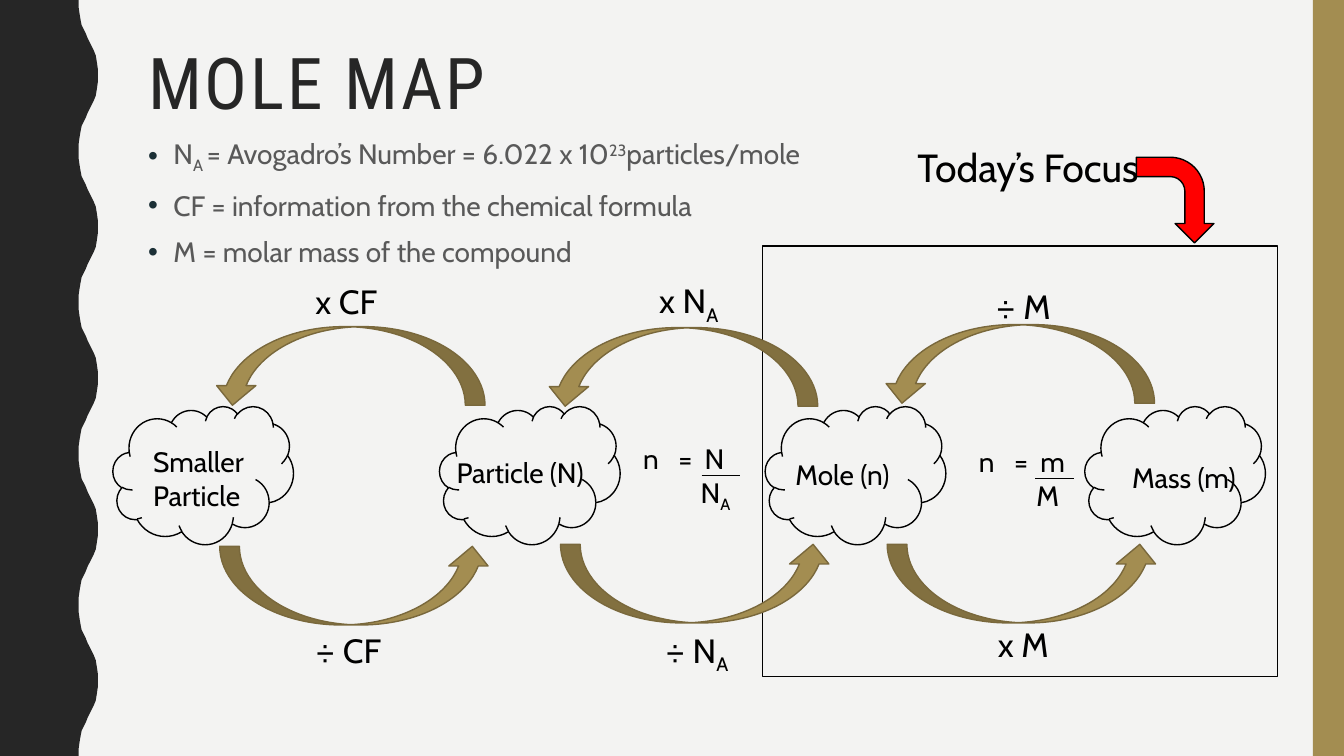
"""Build the Mole Map slide: conversions between particles, moles and mass."""
from lxml import etree
from pptx import Presentation
from pptx import util as u
from pptx.dml.color import RGBColor
from pptx.enum import shapes, text
from pptx.oxml import ns

PX = 9144
COLORS = {
    "paper": "F3F3F2", "wave": "262626", "gold": "A38D51", "gold_edge": "79683C",
    "body": "595959", "bullet": "1B2F36", "ink": "000000", "red": "FF0000",
}


def write(paragraph, pieces, size, color, font="Cabin"):
    for words, baseline in pieces:
        run = paragraph.add_run()
        run.text = words
        run.font.size = u.Pt(size)
        run.font.name = font
        run.font.color.rgb = RGBColor.from_string(COLORS[color])
        if baseline:
            run._r.get_or_add_rPr().set("baseline", str(baseline * 1000))


def paint(shape, fill, line):
    shape.shadow.inherit = False
    if fill:
        shape.fill.solid()
        shape.fill.fore_color.rgb = RGBColor.from_string(COLORS[fill])
    else:
        shape.fill.background()
    if line:
        shape.line.color.rgb = RGBColor.from_string(COLORS[line])
        shape.line.width = u.Pt(1)
    else:
        shape.line.fill.background()


deck = Presentation()
deck.slide_width, deck.slide_height = 1333 * PX, 750 * PX
slide = deck.slides.add_slide(deck.slide_layouts[1])
slide.background.fill.solid()
slide.background.fill.fore_color.rgb = RGBColor.from_string(COLORS["paper"])

rise = [(78, 0), (78, 7), (79, 14), (80, 20), (81, 25), (83, 29), (85, 33), (87, 38),
        (89, 42), (91, 46), (93, 50), (95, 55), (96, 61), (97, 68), (97, 75)]
period = rise + [(x, 150 - y) for x, y in reversed(rise[:-1])]
edge = [(x, y + 150 * turn) for turn in range(5) for x, y in period]
wave = slide.shapes.build_freeform(0, 0, scale=PX)
wave.add_line_segments(edge + [(0, 750)], close=True)
paint(wave.convert_to_shape(), "wave", None)

title, body = slide.shapes.title, slide.placeholders[1]
for holder, top, height in ((title, 42, 163), (body, 127, 592)):
    holder.left, holder.top = 137 * PX, top * PX
    holder.width, holder.height = 1113 * PX, height * PX
    holder.text_frame.vertical_anchor = text.MSO_ANCHOR.TOP
    holder.text_frame.auto_size = text.MSO_AUTO_SIZE.NONE

heading = title.text_frame.paragraphs[0]
heading.alignment = text.PP_ALIGN.LEFT
heading.line_spacing = 0.9
write(heading, [("MOLE MAP", 0)], 51, "wave", "Roboto Condensed")
heading.runs[0]._r.get_or_add_rPr().set("spc", "200")

definitions = [
    [("N", 0), ("A ", -25), ("= Avogadro’s Number = 6.022 x 10", 0), ("23", 30),
     ("particles/mole", 0)],
    [("CF = information from the chemical formula", 0)],
    [("M = molar mass of the compound", 0)],
]
for number, pieces in enumerate(definitions):
    definition = body.text_frame.paragraphs[0] if number == 0 else body.text_frame.add_paragraph()
    definition.line_spacing = 1.1
    definition.space_before = u.Pt(7)
    props = definition._p.get_or_add_pPr()
    props.set("marL", str(25 * PX))
    props.set("indent", str(-25 * PX))
    bullet_color = etree.SubElement(props, ns.qn("a:buClr"))
    etree.SubElement(bullet_color, ns.qn("a:srgbClr"), val=COLORS["bullet"])
    etree.SubElement(props, ns.qn("a:buFont"), typeface="Arial")
    etree.SubElement(props, ns.qn("a:buChar"), char="•")
    write(definition, pieces, 20, "body")

labels = [
    (142, 436, 117, 77, 20, [("Smaller Particle", 0)]),
    (443, 447, 159, 44, 20, [("Particle (N)", 0)]),
    (779, 449, 145, 44, 20, [("Mole (n)", 0)]),
    (1113, 452, 137, 44, 20, [("Mass (m)", 0)]),
    (303, 274, 97, 50, 24, [("x CF", 0)]),
    (303, 620, 97, 50, 24, [("÷ CF", 0)]),
    (644, 273, 93, 50, 24, [("x N", 0), ("A", -25)]),
    (650, 620, 100, 50, 24, [("÷ N", 0), ("A", -25)]),
    (978, 279, 100, 50, 24, [("÷ M", 0)]),
    (980, 614, 93, 50, 24, [("x M", 0)]),
    (900, 137, 330, 57, 28, [("Today’s Focus", 0)]),
]
for left, top, width, height, size, pieces in labels:
    label = slide.shapes.add_textbox(left * PX, top * PX, width * PX, height * PX)
    label.text_frame.word_wrap = True
    write(label.text_frame.paragraphs[0], pieces, size, "ink")

formulas = [
    (628, 433, 696, 472, "N", [("N", 0), ("A", -25)]),
    (961, 436, 1027, 475, "m", [("M", 0)]),
]
for left, top, bar_left, bar_top, numerator, denominator in formulas:
    formula = slide.shapes.add_textbox(left * PX, top * PX, 128 * PX, 77 * PX)
    formula.text_frame.word_wrap = True
    upper = formula.text_frame.paragraphs[0]
    tabs = etree.SubElement(upper._p.get_or_add_pPr(), ns.qn("a:tabLst"))
    for stop in (35, 61):
        etree.SubElement(tabs, ns.qn("a:tab"), pos=str(stop * PX), algn="l")
    write(upper, [("n\t=\t" + numerator, 0)], 20, "ink")
    lower = formula.text_frame.add_paragraph()
    lower._p.get_or_add_pPr().set("marL", str(57 * PX))
    write(lower, denominator, 20, "ink")
    bar = slide.shapes.add_connector(shapes.MSO_CONNECTOR.STRAIGHT, bar_left * PX, bar_top * PX,
                                     (bar_left + 38) * PX, bar_top * PX)
    bar.line.color.rgb = RGBColor.from_string(COLORS["ink"])
    bar.line.width = u.Pt(0.5)
    etree.SubElement(bar._element.spPr, ns.qn("a:effectLst"))

KIND = shapes.MSO_SHAPE
figures = [
    (KIND.RECTANGLE, 1302, 0, 31, 750, 0, "gold", None),
    (KIND.RECTANGLE, 756, 244, 511, 427, 0, None, "ink"),
    (KIND.BENT_ARROW, 1123, 160, 85, 77, 90, "red", "ink"),
]
figures += [(KIND.CLOUD, left, 403, 179, 137, 0, None, "ink") for left in (112, 436, 759, 1076)]
figures += [(KIND.CURVED_UP_ARROW, left, top, 270, 78, turn, "gold", "gold_edge")
            for left, top, turn in ((211, 324, 180), (541, 325, 180), (875, 322, 180),
                                    (218, 542, 0), (556, 540, 0), (880, 540, 0))]
for kind, left, top, width, height, turn, fill, line in figures:
    figure = slide.shapes.add_shape(kind, left * PX, top * PX, width * PX, height * PX)
    figure.rotation = turn
    paint(figure, fill, line)

deck.save("out.pptx")
